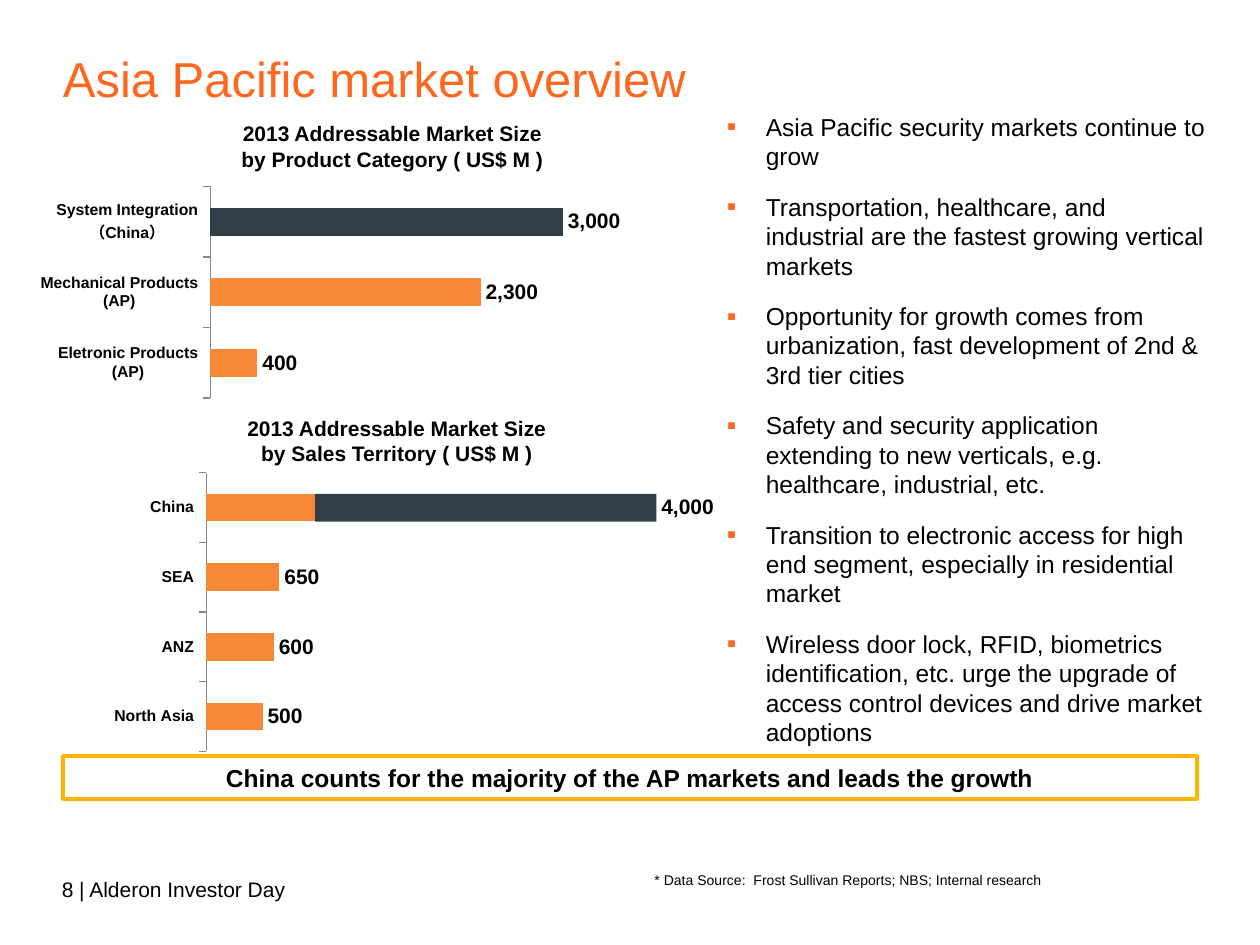
from pptx import Presentation
from pptx.chart.data import CategoryChartData
from pptx.dml.color import RGBColor
from pptx.enum.chart import XL_CHART_TYPE, XL_LABEL_POSITION, XL_TICK_MARK
from pptx.enum.shapes import MSO_SHAPE
from pptx.enum.text import MSO_ANCHOR, PP_ALIGN
from pptx.oxml import parse_xml
from pptx.oxml.ns import nsdecls
from pptx.util import Inches, Pt

BAR = XL_CHART_TYPE.BAR_CLUSTERED
OUTSIDE_END = XL_LABEL_POSITION.OUTSIDE_END
TICK_OUTSIDE, TICK_NONE = XL_TICK_MARK.OUTSIDE, XL_TICK_MARK.NONE
RECTANGLE = MSO_SHAPE.RECTANGLE
TOP, MIDDLE = MSO_ANCHOR.TOP, MSO_ANCHOR.MIDDLE
LEFT, CENTER, RIGHT = PP_ALIGN.LEFT, PP_ALIGN.CENTER, PP_ALIGN.RIGHT

ACCENT, ORANGE, SLATE, GOLD = "FF671F", "F68837", "333F48", "FFB500"
BLACK, WHITE, GRAY = "000000", "FFFFFF", "868686"


def color(hex_value):
    return RGBColor.from_string(hex_value)


class SlideBuilder:
    font_name = "Arial"
    bullet_indent = Inches(0.31)

    def __init__(self, slide):
        self.slide = slide

    def set_font(self, font, size, bold=False, hex_color=BLACK):
        values = {"name": self.font_name, "size": Pt(size), "bold": bold}
        for name, value in values.items():
            setattr(font, name, value)
        font.color.rgb = color(hex_color)

    def fill_text(self, shape, lines, size, bold=False, hex_color=BLACK,
                  align=LEFT, anchor=TOP, left_inset=0.1, bullets=False):
        frame = shape.text_frame
        values = {"word_wrap": True, "vertical_anchor": anchor,
                  "margin_left": Inches(left_inset), "margin_right": Inches(0.1),
                  "margin_top": Inches(0.05), "margin_bottom": Inches(0.05)}
        for name, value in values.items():
            setattr(frame, name, value)
        for index, line in enumerate(lines):
            paragraph = frame.add_paragraph() if index else frame.paragraphs[0]
            paragraph.text = line
            paragraph.alignment = align
            if bullets:
                self.add_bullet(paragraph)
                paragraph.space_before = Pt(12 if index else 0)
            self.set_font(paragraph.font, size, bold, hex_color)

    def add_bullet(self, paragraph):
        properties = paragraph._p.get_or_add_pPr()
        properties.set("marL", str(self.bullet_indent))
        properties.set("indent", str(-self.bullet_indent))
        for element in (f'<a:buClr {{}}><a:srgbClr val="{ACCENT}"/></a:buClr>',
                        '<a:buSzPct {} val="110000"/>',
                        '<a:buFont {} typeface="Arial"/>',
                        '<a:buChar {} char="▪"/>'):
            properties.append(parse_xml(element.format(nsdecls("a"))))

    def text(self, position, lines, size, **style):
        box = self.slide.shapes.add_textbox(*map(Inches, position))
        self.fill_text(box, lines, size, **style)

    def rectangle(self, position, fill, line=None, line_width=2):
        shape = self.slide.shapes.add_shape(RECTANGLE, *map(Inches, position))
        shape.shadow.inherit = False
        shape.fill.solid()
        shape.fill.fore_color.rgb = color(fill)
        if line:
            shape.line.color.rgb = color(line)
            shape.line.width = Pt(line_width)
        else:
            shape.line.fill.background()
        return shape

    def bar_chart(self, position, values, colors, maximum, major_unit, plot):
        data = CategoryChartData(number_format="0")
        data.categories = values.keys()
        data.add_series("Series 1", values.values())
        chart = self.slide.shapes.add_chart(BAR, *map(Inches, position), data).chart
        chart.has_legend = chart.has_title = False
        self.set_font(chart.font, 18)

        category_axis = chart.category_axis
        category_axis.major_tick_mark = TICK_OUTSIDE
        category_axis.minor_tick_mark = TICK_NONE
        category_axis.has_major_gridlines = False
        category_axis.format.line.color.rgb = color(GRAY)
        self.set_font(category_axis.tick_labels.font, 9, bold=True)
        axis_values = {"minimum_scale": 0, "maximum_scale": maximum,
                       "major_unit": major_unit, "has_major_gridlines": False,
                       "visible": False}
        for name, value in axis_values.items():
            setattr(chart.value_axis, name, value)

        bars = chart.plots[0]
        bars.gap_width = 150
        bars.vary_by_categories = False
        series = bars.series[0]
        series.invert_if_negative = False
        for index, hex_color in enumerate(colors):
            fill = series.points[index].format.fill
            fill.solid()
            fill.fore_color.rgb = color(hex_color)
        labels = series.data_labels
        label_values = {"show_value": True, "position": OUTSIDE_END,
                        "number_format": "#,##0", "number_format_is_linked": False}
        for name, value in label_values.items():
            setattr(labels, name, value)
        self.set_font(labels.font, 12, bold=True)
        self.place_plot(chart, plot)

    def place_plot(self, chart, plot):
        """Fix the inner plot area as fractions of the chart frame."""
        sizes = "".join(f'<c:{name} val="{value}"/>' for name, value in zip("xywh", plot))
        layout = parse_xml(
            f'<c:layout {nsdecls("c")}><c:manualLayout><c:layoutTarget val="inner"/>'
            f'<c:xMode val="edge"/><c:yMode val="edge"/>{sizes}'
            '</c:manualLayout></c:layout>')
        plot_area = chart._chartSpace.chart.plotArea
        for old_layout in plot_area.findall(layout.tag):
            plot_area.remove(old_layout)
        plot_area.insert(0, layout)


def main():
    presentation = Presentation()
    presentation.slide_width = Inches(10)
    presentation.slide_height = Inches(7.5)
    builder = SlideBuilder(presentation.slides.add_slide(presentation.slide_layouts[6]))

    builder.text((0.49, 6.91, 6.69, 0.41), ["8 | Alderon Investor Day"], 12, left_inset=0)
    builder.text((0.5, 0.33, 5.73, 0.58), ["Asia Pacific market overview"], 28,
                 hex_color=ACCENT, anchor=MIDDLE, left_inset=0)
    banner = builder.rectangle((0.5, 6, 9, 0.34), WHITE, GOLD)
    builder.fill_text(
        banner, ["China counts for the majority of the AP markets and leads the growth"],
        14, bold=True, align=CENTER, anchor=MIDDLE)

    builder.text((5.67, 0.84, 4, 5.17), [
        "Asia Pacific security markets continue to grow",
        "Transportation, healthcare, and industrial are the fastest growing vertical markets",
        "Opportunity for growth comes from urbanization, fast development of "
        "2nd & 3rd tier cities",
        "Safety and security application extending to new verticals, e.g. "
        "healthcare, industrial, etc.",
        "Transition to electronic access for high end segment, especially in "
        "residential market",
        "Wireless door lock, RFID, biometrics identification, etc. urge the "
        "upgrade of access control devices and drive market adoptions",
    ], 14, bullets=True)

    for position, subject in (((1.25, 0.91, 3.73, 0.49), "Product Category"),
                              ((0.76, 3.25, 4.78, 0.5), "Sales Territory")):
        builder.text(position, ["2013 Addressable Market Size", f"by {subject} ( US$ M )"],
                     12, bold=True, align=CENTER)

    builder.bar_chart(
        (-0.36, 1.31, 5.92, 2.12),
        {"Eletronic Products\n(AP)": 400, "Mechanical Products\n(AP)": 2300,
         "System Integration\n（China）": 3000},
        [ORANGE, ORANGE, SLATE], 4000, 1000, (0.343, 0.08, 0.63, 0.793))
    builder.bar_chart(
        (0.67, 3.64, 5.12, 2.79),
        {"North Asia": 500, "ANZ": 600, "SEA": 650, "China": 4000},
        [ORANGE] * 4, 4500, 500, (0.189, 0.04, 0.785, 0.793))
    builder.rectangle((2.5, 3.92, 2.71, 0.22), SLATE)

    builder.text((4.19, 6.87, 4.18, 0.24),
                 ["* Data Source:  Frost Sullivan Reports; NBS; Internal research"],
                 8, align=RIGHT)
    presentation.save("out.pptx")


if __name__ == "__main__":
    main()
